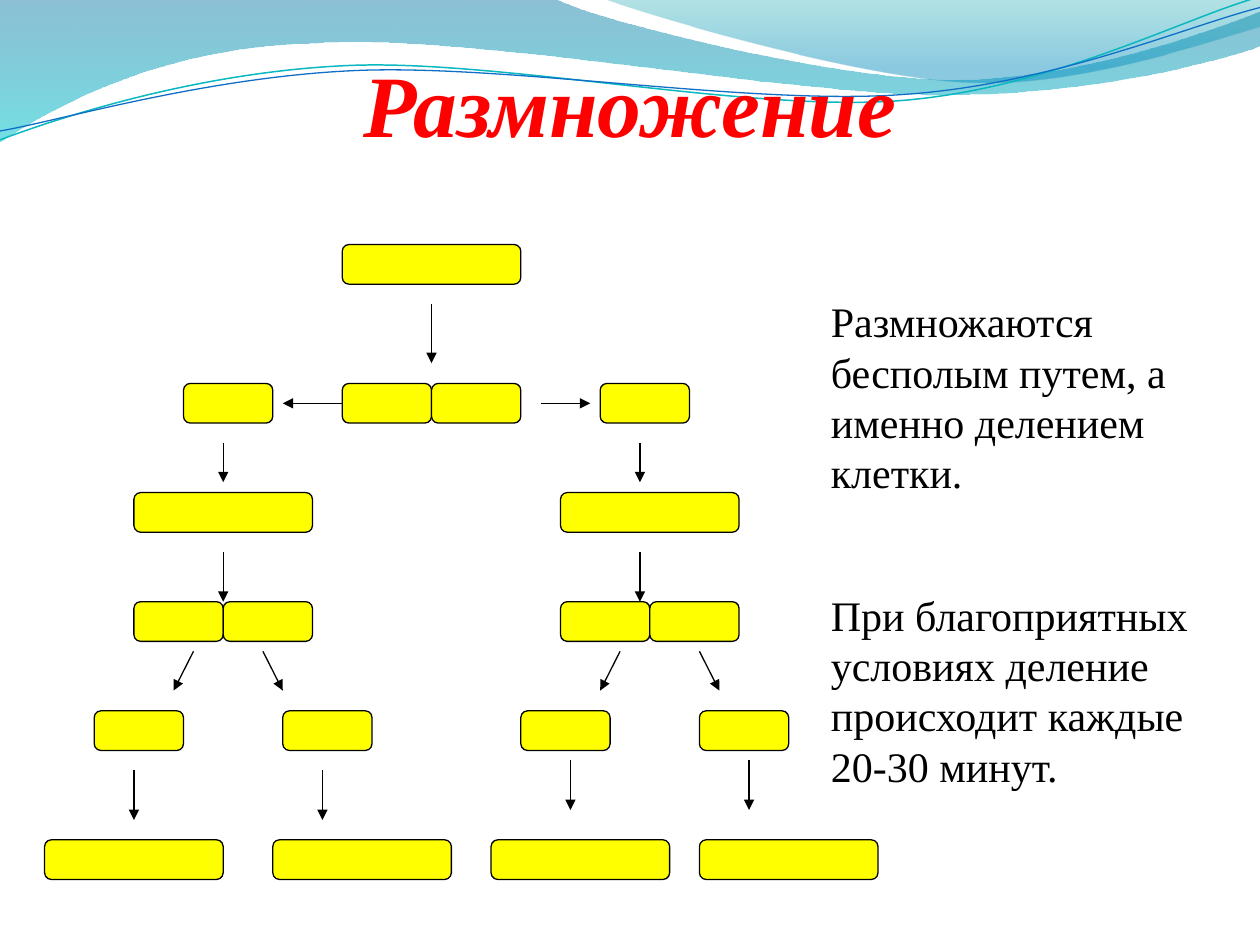
from math import cos, radians, sin
from lxml.etree import Element, SubElement
from pptx import Presentation
from pptx.dml.color import RGBColor
from pptx.enum.shapes import MSO_CONNECTOR as Link, MSO_SHAPE as Kind
from pptx.enum.text import MSO_ANCHOR as Anchor, PP_ALIGN as Align
from pptx.oxml import parse_xml
from pptx.oxml.ns import nsdecls, qn
from pptx.util import Cm, Pt

FONT = "Times New Roman"
TITLE = "Размножение"
NOTES = [
    "Размножаются бесполым путем, а именно делением клетки.",
    "При благоприятных условиях деление происходит каждые 20-30 минут.",
]

HALF, FULL, TALL = 1.8, 3.6, 0.8
ROWS = [
    (4.93, FULL, [6.9]),
    (7.73, HALF, [3.7, 6.9, 8.7, 12.1]),
    (9.93, FULL, [2.7, 11.3]),
    (12.13, HALF, [2.7, 4.5, 11.3, 13.1]),
    (14.33, HALF, [1.9, 5.7, 10.5, 14.1]),
    (16.93, FULL, [0.9, 5.5, 9.9, 14.1]),
]
DROPS = [
    (6.13, 7.32, [(8.7, 8.7)]),
    (8.93, 9.72, [(4.5, 4.5), (12.9, 12.9)]),
    (11.13, 12.13, [(4.5, 4.5), (12.9, 12.9)]),
    (13.13, 13.92, [(3.9, 3.5), (5.3, 5.7), (12.5, 12.1), (14.1, 14.5)]),
    (15.53, 16.53, [(2.7, 2.7), (6.5, 6.5)]),
    (15.33, 16.33, [(11.5, 11.5), (15.1, 15.1)]),
]

UNIT = Cm(2.54)
TILT = 357.3
BANDS = [
    ([(0, 0), (4.4, -0.01), (4.76, 0.17, 6.64, 0.63, 7.58, 0.63),
      (8.53, 0.63, 9.58, 0.26, 10, 0.09), (10.01, 0.36),
      (9.83, 0.44, 8.7, 0.76, 7.46, 0.75), (6.22, 0.75, 3.82, 0.28, 2.57, 0.34),
      (1.29, 0.36, 0.46, 0.83, -0.01, 1.13)],
     [(0, "0074A1", 45), (100, "00C6CF", 55)]),
    ([(4.79, -0.01), (5.09, 0.11, 6.82, 0.62, 7.69, 0.65),
      (8.56, 0.69, 9.61, 0.32, 10, 0.21), (10, 0)],
     [(0, "00A1A9", 30), (80, "008BBF", 45)]),
]
WAVES = [
    ([(0, 1.11), (0.48, 0.93, 1.58, 0.57, 2.77, 0.52),
      (3.95, 0.47, 5.93, 0.89, 7.13, 0.8), (8.33, 0.71, 9.38, 0.15, 9.98, -0.02)],
     (4.99, 0.57), "0AB8BF", 0.85),
    ([(0, 1.04), (0.47, 0.96, 1.64, 0.61, 2.83, 0.56),
      (4.03, 0.51, 5.97, 0.84, 7.17, 0.75), (8.36, 0.67, 9.41, 0.21, 10, 0.06)],
     (5, 0.59), "0F6FC6", 0.75),
]


def paint(part, color):
    part.solid()
    part.fore_color.rgb = RGBColor.from_string(color)


def stroke(shape, color, width):
    paint(shape.line.fill, color)
    shape.line.width = Pt(width)


def write(para, text, size=24, color="000000", bold=False, slant=False,
          align=Align.LEFT, before=0, pitch=None):
    para.alignment = align
    para.space_before = Pt(before)
    if pitch:
        para.line_spacing = Pt(pitch)
    run = para.add_run()
    run.text = text
    font = run.font
    font.name, font.size, font.bold, font.italic = FONT, Pt(size), bold, slant
    paint(font.fill, color)


def pairs(step):
    return list(zip(step[::2], step[1::2]))


def level(steps, mid):
    c, s = cos(radians(-TILT)), sin(radians(-TILT))
    flat = []
    for step in steps:
        spots = [(x - mid[0], y - mid[1]) for x, y in pairs(step)]
        flat.append([v for x, y in spots
                     for v in (mid[0] + x * c - y * s, mid[1] + x * s + y * c)])
    return flat


def curve(shapes, steps, close):
    steps = [[v * UNIT for v in step] for step in steps]
    pen = shapes.build_freeform(*steps[0])
    pen.add_line_segments([step[-2:] for step in steps[1:]], close=close)
    shape = pen.convert_to_shape()
    shape.shadow.inherit = False
    for step, seg in zip(steps[1:], list(shape._element.iter(qn("a:lnTo")))):
        if len(step) == 6:
            bend = Element(qn("a:cubicBezTo"))
            for x, y in pairs(step):
                SubElement(bend, qn("a:pt"), x=str(round(x - shape.left)),
                           y=str(round(y - shape.top)))
            seg.getparent().replace(seg, bend)
    return shape


def shade(shape, stops):
    marks = "".join(
        f'<a:gs pos="{at * 1000}"><a:srgbClr val="{color}">'
        f'<a:alpha val="{alpha * 1000}"/></a:srgbClr></a:gs>'
        for at, color, alpha in stops)
    grad = parse_xml(f'<a:gradFill {nsdecls("a")}><a:gsLst>{marks}</a:gsLst>'
                     '<a:lin ang="5400000" scaled="0"/></a:gradFill>')
    shape._element.spPr.find(qn("a:custGeom")).addnext(grad)
    shape.line.fill.background()


def cell(shapes, left, top, width):
    box = shapes.add_shape(Kind.ROUNDED_RECTANGLE, Cm(left), Cm(top), Cm(width), Cm(TALL))
    box.shadow.inherit = False
    box.adjustments[0] = 0.17
    paint(box.fill, "FFFF00")
    stroke(box, "000000", 0.75)
    return box


def arrow(shapes, *ends):
    link = shapes.add_connector(Link.STRAIGHT, *map(Cm, ends))
    stroke(link, "000000", 0.75)
    SubElement(link.line._get_or_add_ln(), qn("a:tailEnd"), type="triangle")
    SubElement(link._element.spPr, qn("a:effectLst"))
    return link


def main():
    deck = Presentation()
    deck.slide_width, deck.slide_height = Cm(25.4), Cm(19.05)
    slide = deck.slides.add_slide(deck.slide_layouts[5])
    shapes = slide.shapes

    for steps, stops in BANDS:
        shade(curve(shapes, steps, True), stops)
    for steps, mid, color, width in WAVES:
        wave = curve(shapes, level(steps, mid), False)
        wave.rotation = TILT
        wave.fill.background()
        stroke(wave, color, width)

    title = shapes.title
    shapes._spTree.append(title._element)
    title.left, title.top, title.width, title.height = Cm(1.27), Cm(0.76), Cm(22.86), Cm(2.36)
    frame = title.text_frame
    frame.vertical_anchor = Anchor.BOTTOM
    frame.margin_left = frame.margin_right = frame.margin_bottom = 0
    write(frame.paragraphs[0], TITLE, size=50, color="FF0000", bold=True,
          slant=True, align=Align.CENTER)

    cells = {(left, top): cell(shapes, left, top, width)
             for top, width, lefts in ROWS for left in lefts}
    for top, end, spans in DROPS:
        for start, stop in spans:
            arrow(shapes, start, top, stop, end)
    arrow(shapes, 10.9, 8.13, 11.9, 8.13)
    arrow(shapes, 6.9, 8.13, 5.7, 8.13).begin_connect(cells[6.9, 7.73], 1)

    body = shapes.add_textbox(Cm(16.5), Cm(4.57), Cm(8.31), Cm(11.89)).text_frame
    body.word_wrap = True
    body.margin_top = Cm(1.4)
    for i, note in enumerate(NOTES):
        para = body.add_paragraph() if i else body.paragraphs[0]
        write(para, note, before=53 * i, pitch=28.7)

    deck.save("out.pptx")


if __name__ == "__main__":
    main()
